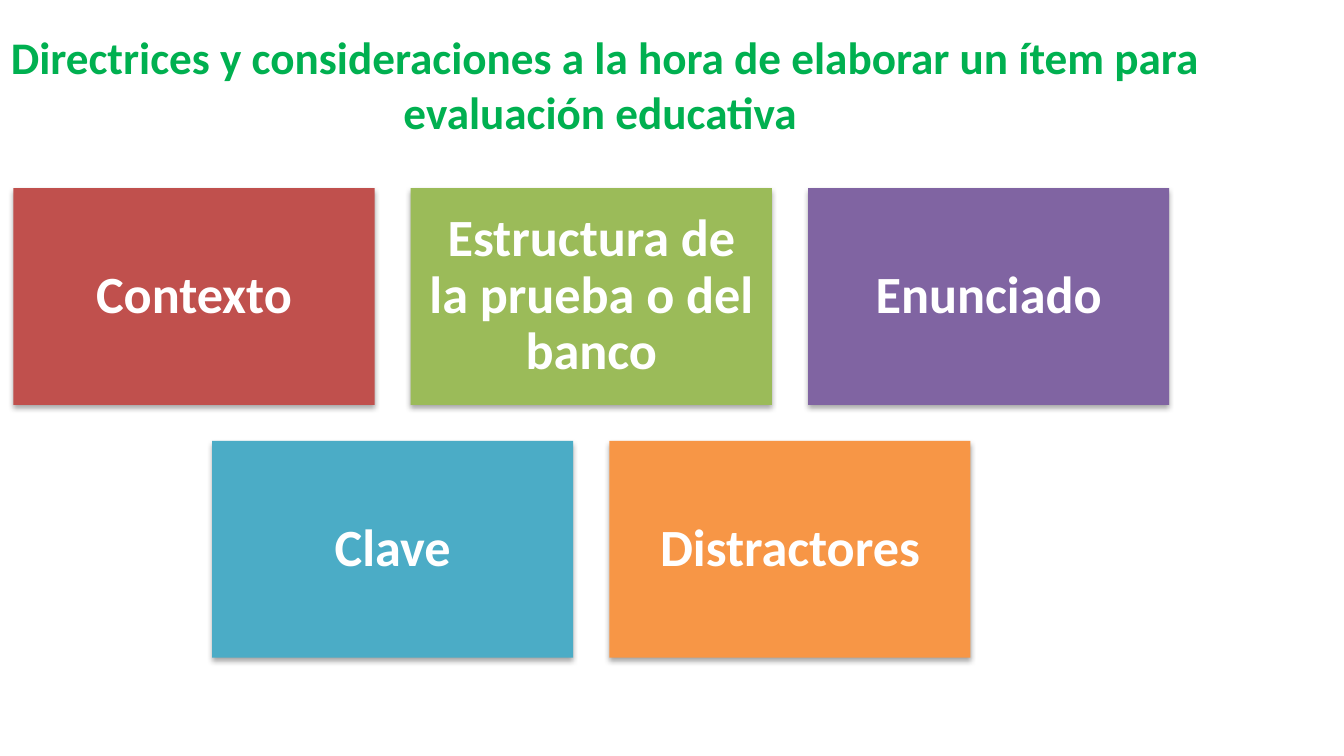
from dataclasses import dataclass
from lxml import etree
from pptx import Presentation
from pptx import util as u
from pptx.dml.color import RGBColor
from pptx.enum import shapes, text
from pptx.oxml import ns


@dataclass(frozen=True)
class Theme:
    font: str = "Calibri"
    head: str = "00B050"
    ink: str = "FFFFFF"
    shade: str = "000000"
    big: float = 24.2
    label: float = 28


THEME = Theme()

# Card grid, in inches: three cards and two gaps fill SPAN
SPAN = 8.6
WIDE = SPAN / 3.2
HIGH = WIDE * 0.6
GAP = WIDE * 0.1
MID, TOP = 4.4, 1.4
ROWS = [
    [("Contexto", "C0504D"),
     ("Estructura de la prueba o del banco", "9BBB59"),
     ("Enunciado", "8064A2")],
    [("Clave", "4BACC6"), ("Distractores", "F79646")],
]


def write(frame, words, size, color):
    """Put one centred bold run in a text frame."""
    frame.word_wrap = True
    frame.vertical_anchor = text.MSO_ANCHOR.MIDDLE
    para = frame.paragraphs[0]
    para.alignment = text.PP_ALIGN.CENTER
    run = para.add_run()
    run.text = words
    run.font.name = THEME.font
    run.font.size = u.Pt(size)
    run.font.bold = True
    run.font.color.rgb = RGBColor.from_string(color)
    return para


def shade(shape):
    """Give a shape a soft shadow straight below it."""
    shape.shadow.inherit = False
    effects = shape._element.spPr.find(ns.qn("a:effectLst"))
    outer = etree.SubElement(
        effects, ns.qn("a:outerShdw"), blurRad=str(u.Pt(3.1)),
        dist=str(u.Pt(1.8)), dir="5400000", rotWithShape="0")
    tint = etree.SubElement(outer, ns.qn("a:srgbClr"), val=THEME.shade)
    etree.SubElement(tint, ns.qn("a:alpha"), val="35000")


def title(slide, words):
    box = slide.shapes.add_textbox(
        u.Inches(-0.55), u.Inches(0.25), u.Inches(10.11), u.Inches(0.75))
    write(box.text_frame, words, THEME.big, THEME.head)


def card(slide, left, top, words, color):
    box = slide.shapes.add_shape(
        shapes.MSO_SHAPE.RECTANGLE,
        u.Inches(left), u.Inches(top), u.Inches(WIDE), u.Inches(HIGH))
    box.fill.solid()
    box.fill.fore_color.rgb = RGBColor.from_string(color)
    box.line.fill.background()
    shade(box)
    frame = box.text_frame
    frame.margin_left = frame.margin_right = u.Inches(0.12)
    frame.margin_top = frame.margin_bottom = u.Inches(0.12)
    para = write(frame, words, THEME.label, THEME.ink)
    para.line_spacing = 0.9


def cards(slide):
    """Lay out the rows, each centred on MID."""
    for row, items in enumerate(ROWS):
        span = len(items) * (WIDE + GAP) - GAP
        for col, (words, color) in enumerate(items):
            left = MID - span / 2 + col * (WIDE + GAP)
            card(slide, left, TOP + row * (HIGH + GAP), words, color)


def main():
    # Widescreen page, 16 to 9
    deck = Presentation()
    deck.slide_width = u.Inches(10)
    deck.slide_height = u.Inches(10) * 9 // 16
    slide = deck.slides.add_slide(deck.slide_layouts[6])

    # Heading
    title(slide, "Directrices y consideraciones a la hora de elaborar "
                 "un ítem para evaluación educativa ")

    # Five topics in two rows
    cards(slide)

    deck.save("out.pptx")


if __name__ == "__main__":
    main()
